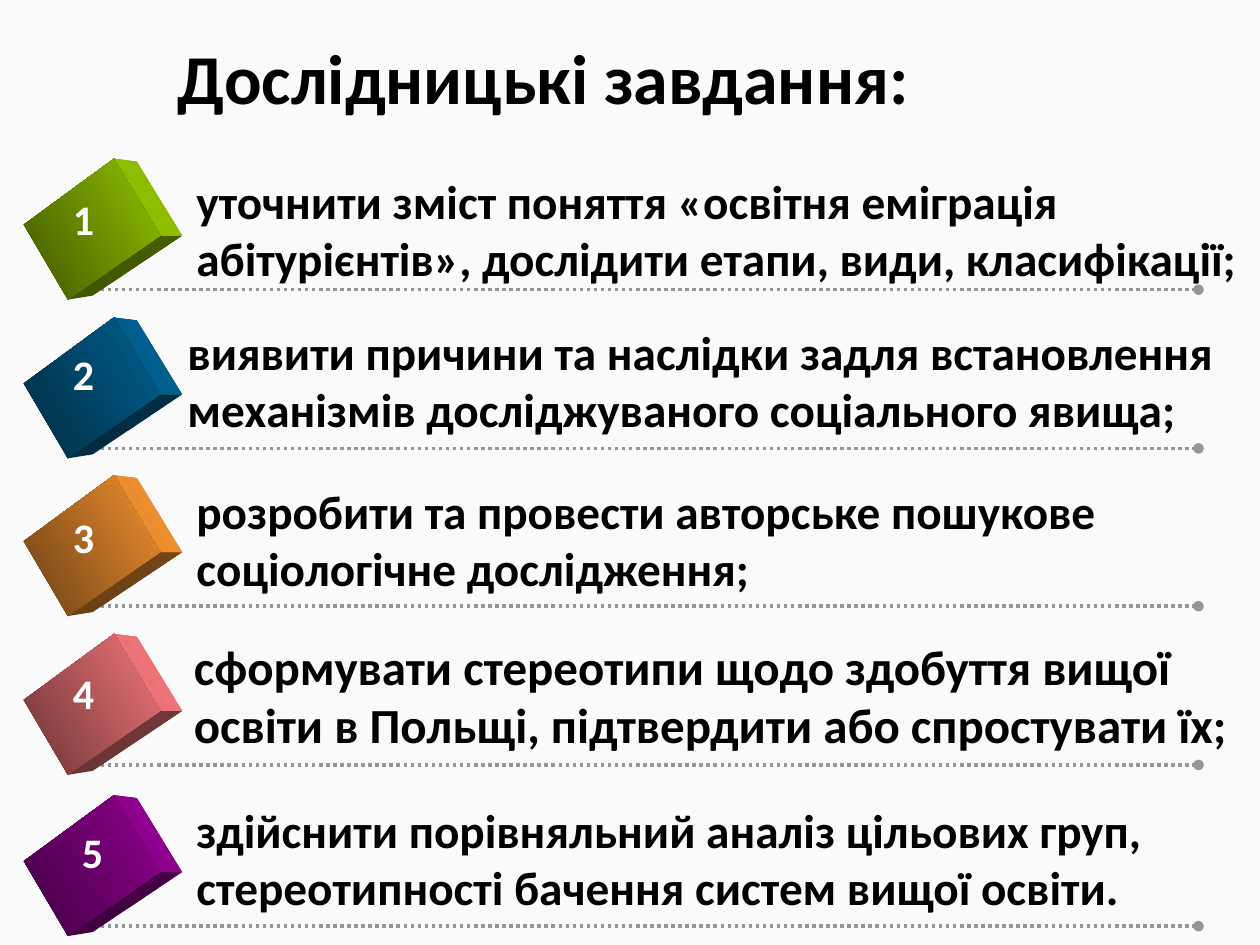
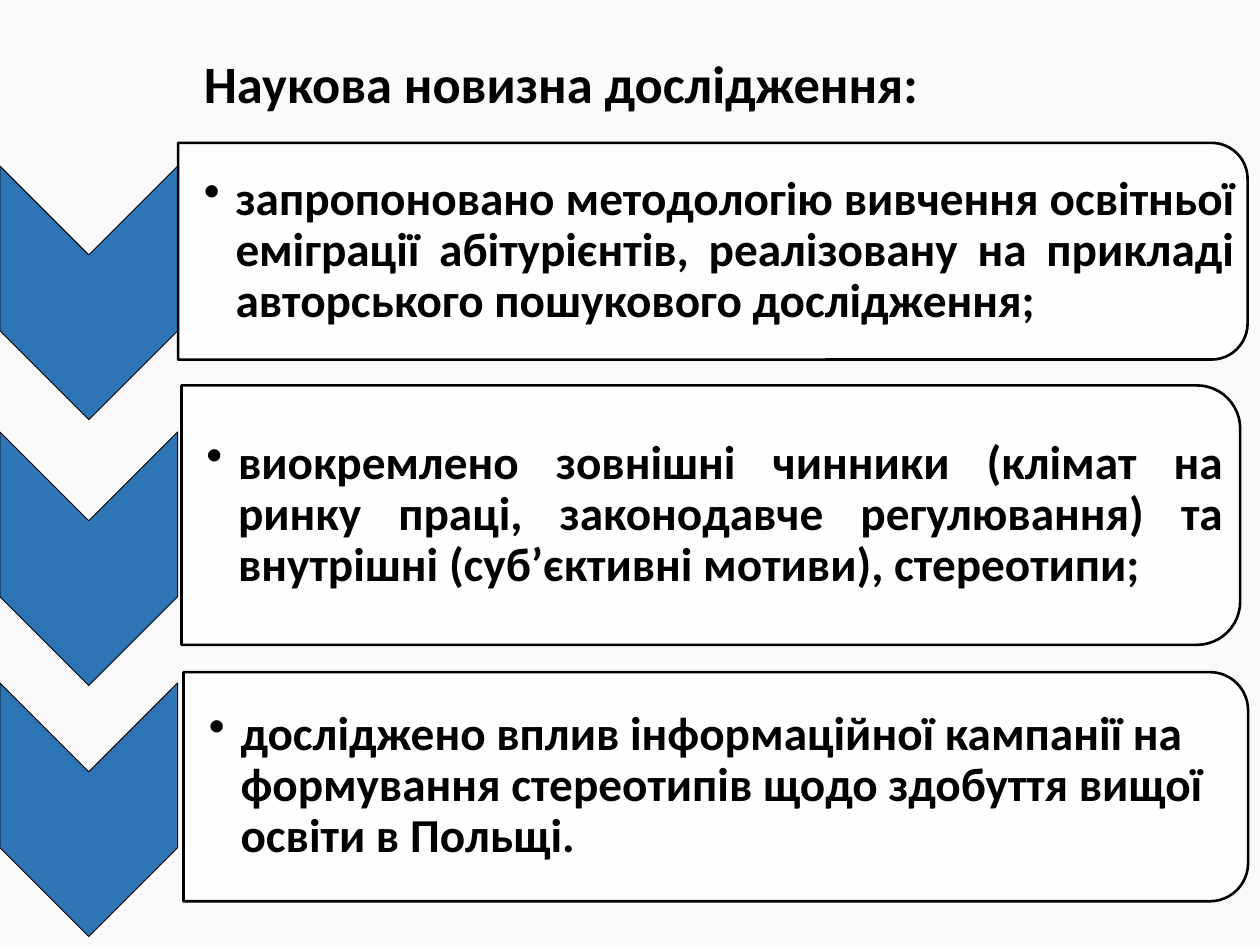
import pptx
import pptx.dml.color
import pptx.enum.dml
import pptx.enum.shapes
import pptx.enum.text
import pptx.oxml
import pptx.oxml.ns
import pptx.util
from pptx.util import Cm

SHAPES = pptx.enum.shapes.MSO_SHAPE
ALIGN = pptx.enum.text.PP_ALIGN
ANCHOR = pptx.enum.text.MSO_ANCHOR

# Outlines of a cube's three faces in cm, measured from the row's dotted line
CUBE_FRONT = [(0.48, -1.31), (2.3, -2.64), (3.23, -1.09), (1.37, 0.2)]
CUBE_SIDE = [(2.3, -2.64), (2.76, -2.58), (3.67, -1.09), (3.23, -1.09)]
CUBE_BOTTOM = [(1.37, 0.2), (3.23, -1.09), (3.67, -1.09), (1.87, 0.12)]

# line y, colour, number left, number top, text left, text top, text width, size, text
TASKS = [
    (5.84, "99CC00", 1.22, 3.78, 3.71, 3.35, 22.28, 27,
     "уточнити зміст поняття «освітня еміграція абітурієнтів», "
     "дослідити етапи, види, класифікації;"),
    (9.04, "006699", 1.22, 6.91, 3.53, 6.4, 22.81, 27,
     "виявити причини та наслідки задля встановлення механізмів "
     "досліджуваного соціального явища;"),
    (12.22, "FF9933", 1.22, 10.19, 3.71, 9.6, 22.81, 27,
     "розробити та провести авторське пошукове соціологічне дослідження;"),
    (15.42, "FF7C80", 1.22, 13.34, 3.66, 12.7, 22.35, 28,
     "сформувати стереотипи щодо здобуття вищої освіти в Польщі, "
     "підтвердити або спростувати їх;"),
    (18.67, "990099", 1.4, 16.54, 3.71, 16.03, 22.81, 27,
     "здійснити порівняльний аналіз цільових груп, "
     "стереотипності бачення систем вищої освіти."),
]

# chevron top, panel box, text box, alignment, text
NOVELTIES = [
    (3.35, (3.59, 2.88, 21.56, 4.37), (3.58, 3.1, 21.36, 3.94), ALIGN.JUSTIFY,
     "запропоновано методологію вивчення освітньої еміграції абітурієнтів, "
     "реалізовану на прикладі авторського пошукового дослідження;"),
    (8.71, (3.66, 7.77, 21.34, 5.23), (3.63, 8.03, 21.08, 4.7), ALIGN.JUSTIFY,
     "виокремлено зовнішні чинники (клімат на ринку праці, законодавче "
     "регулювання) та внутрішні (суб’єктивні мотиви), стереотипи;"),
    (13.77, (3.7, 13.55, 21.46, 4.62), (3.68, 13.77, 21.23, 4.17), ALIGN.LEFT,
     "досліджено вплив інформаційної кампанії на формування стереотипів "
     "щодо здобуття вищої освіти в Польщі."),
]


def color(value):
    return pptx.dml.color.RGBColor.from_string(value)


def shade(value, factor):
    """Darken a hex colour by multiplying its channels."""
    return "".join(f"{round(int(value[i:i + 2], 16) * factor):02X}" for i in (0, 2, 4))


def add_element(parent, tag, position=None, **attributes):
    element = pptx.oxml.parse_xml(f"<a:{tag} {pptx.oxml.ns.nsdecls('a')}/>")
    for name, value in attributes.items():
        element.set(name, str(value))
    parent.insert(len(parent) if position is None else position, element)
    return element


class Deck:
    FONT = "Calibri"
    BACKGROUND = "FAFAFA"
    INK = "000000"

    def __init__(self):
        self.presentation = pptx.Presentation()
        self.presentation.slide_width = Cm(25.4)
        self.presentation.slide_height = Cm(19.05)
        self.slide = None

    def new_slide(self):
        self.slide = self.presentation.slides.add_slide(self.presentation.slide_layouts[6])
        fill = self.slide.background.fill
        fill.solid()
        fill.fore_color.rgb = color(self.BACKGROUND)

    def text(self, box, content, size, ink=INK, align=ALIGN.LEFT, anchor=ANCHOR.TOP,
             wrap=True, spacing=1.0):
        shape = self.slide.shapes.add_textbox(*map(Cm, box))
        frame = shape.text_frame
        frame.text = content
        frame.word_wrap = wrap
        frame.vertical_anchor = anchor
        paragraph = frame.paragraphs[0]
        paragraph.alignment = align
        paragraph.line_spacing = spacing
        font = paragraph.runs[0].font
        font.name = self.FONT
        font.size = pptx.util.Pt(size)
        font.bold = True
        font.color.rgb = color(ink)
        return frame

    def bullet_text(self, box, content, size, align):
        frame = self.text(box, content, size, align=align, anchor=ANCHOR.MIDDLE, spacing=0.9)
        frame.margin_left = Cm(0.53)
        frame.margin_right = frame.margin_top = frame.margin_bottom = Cm(0.05)
        properties = frame.paragraphs[0]._p.get_or_add_pPr()
        properties.set("marL", str(Cm(0.64)))
        properties.set("indent", str(-Cm(0.64)))
        add_element(properties, "buChar", char="•")

    def dotted_line(self, left, right, y):
        connector = self.slide.shapes.add_connector(
            pptx.enum.shapes.MSO_CONNECTOR.STRAIGHT, Cm(left), Cm(y), Cm(right), Cm(y))
        line = connector.line
        line.color.rgb = color("969696")
        line.width = pptx.util.Pt(2)
        line.dash_style = pptx.enum.dml.MSO_LINE.ROUND_DOT
        add_element(line._get_or_add_ln(), "tailEnd", type="oval")
        add_element(connector._element.spPr, "effectLst")

    def face(self, outline, y, start, end, angle):
        """Draw one cube face with a two-colour gradient."""
        points = [(Cm(x), Cm(y + rise)) for x, rise in outline]
        builder = self.slide.shapes.build_freeform(*points[0])
        builder.add_line_segments(points[1:])
        shape = builder.convert_to_shape()
        shape.shadow.inherit = False
        shape.line.fill.background()
        shape.fill.gradient()
        shape.fill.gradient_angle = angle
        for stop, value in zip(shape.fill.gradient_stops, (start, end)):
            stop.color.rgb = color(value)

    def cube(self, y, base):
        self.face(CUBE_BOTTOM, y, shade(base, 0.42), shade(base, 0.45), 30)
        self.face(CUBE_SIDE, y, shade(base, 0.9), shade(base, 0.95), 30)
        self.face(CUBE_FRONT, y, shade(base, 0.42), shade(base, 0.95), 30)

    def turned_shape(self, kind, box, fill, line_width, opacity=100):
        """Add a shape turned by 90 degrees that covers the given visible box."""
        left, top, width, height = box
        shift = (width - height) / 2
        shape = self.slide.shapes.add_shape(
            kind, Cm(left + shift), Cm(top - shift), Cm(height), Cm(width))
        shape.rotation = 90
        shape.shadow.inherit = False
        shape.fill.solid()
        shape.fill.fore_color.rgb = color(fill)
        if opacity < 100:
            add_element(shape._element.spPr.find(".//" + pptx.oxml.ns.qn("a:srgbClr")),
                        "alpha", val=opacity * 1000)
        shape.line.color.rgb = color(self.INK)
        shape.line.width = pptx.util.Pt(line_width)


def build_tasks(deck):
    deck.new_slide()
    deck.text((0, 0.41, 21.9, 2.49), "Дослідницькі завдання:", 40,
              align=ALIGN.CENTER, anchor=ANCHOR.MIDDLE, spacing=0.9)
    for number, task in enumerate(TASKS, 1):
        y, base, number_left, number_top, left, top, width, size, content = task
        deck.dotted_line(2.03, 24.16, y)
        deck.cube(y, base)
        deck.text((number_left, number_top, 1.63, 1.73), str(number), 24,
                  ink="FFFFFF", wrap=False)
        deck.text((left, top, width, 2.64), content, size)


def build_novelty(deck):
    deck.new_slide()
    for chevron_top, panel_box, text_box, align, content in NOVELTIES:
        deck.turned_shape(SHAPES.CHEVRON, (0, chevron_top, 3.58, 5.11), "2E75B6", 0.5)
        deck.turned_shape(SHAPES.ROUND_2_SAME_RECTANGLE, panel_box, "FFFFFF", 1.5, opacity=90)
        deck.bullet_text(text_box, content, 27, align)
    deck.text((3.86, 0.91, 19.48, 1.55), "Наукова новизна дослідження:", 30)


def main():
    deck = Deck()
    build_tasks(deck)
    build_novelty(deck)
    deck.presentation.save("out.pptx")


if __name__ == "__main__":
    main()
